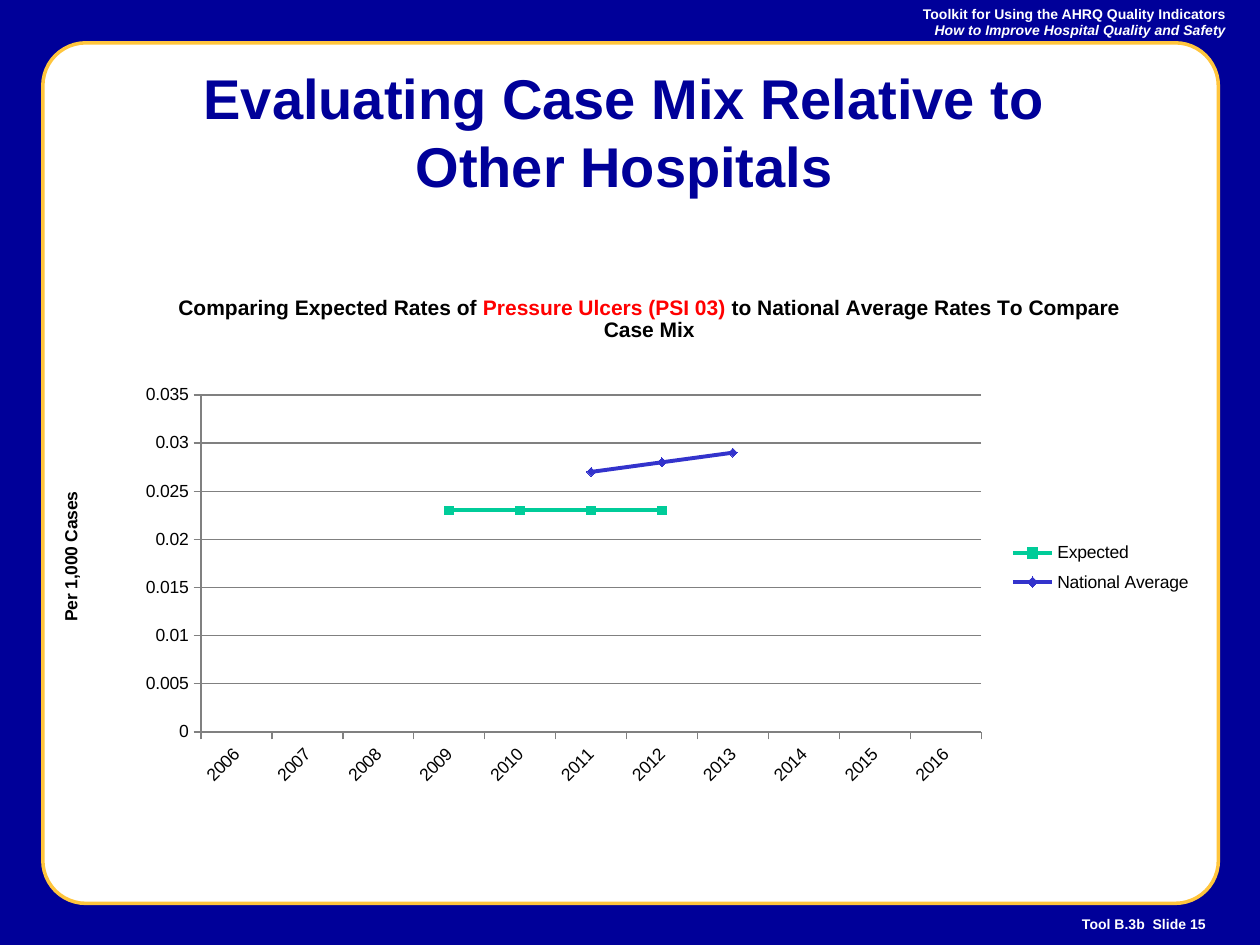
from dataclasses import dataclass

from lxml.etree import SubElement
from pptx import Presentation
from pptx.chart.data import CategoryChartData as ChartData
from pptx.dml.color import RGBColor as Rgb
from pptx.enum.chart import XL_CHART_TYPE as Kind
from pptx.enum.chart import XL_LEGEND_POSITION as Spot
from pptx.enum.chart import XL_MARKER_STYLE as Mark
from pptx.enum.chart import XL_TICK_MARK as Tick
from pptx.enum.shapes import MSO_SHAPE as Form
from pptx.enum.text import MSO_ANCHOR as Anchor
from pptx.enum.text import MSO_AUTO_SIZE as Fit
from pptx.enum.text import PP_ALIGN as Align
from pptx.oxml.ns import qn
from pptx.util import Inches, Pt


@dataclass(frozen=True)
class Theme:
    """Hold the colours, font and type sizes of the slide."""
    face: str = "Arial"
    navy: str = "000099"
    gold: str = "FFC53D"
    white: str = "FFFFFF"
    black: str = "000000"
    red: str = "FF0000"
    grey: str = "808080"
    green: str = "00CC99"
    blue: str = "3333CC"
    head: int = 32
    title: int = 12
    label: int = 10
    note: int = 8


THEME = Theme()
YEARS = [str(year) for year in range(2006, 2017)]
RATES = {
    "Expected": {"2009": 0.023, "2010": 0.023, "2011": 0.023, "2012": 0.023},
    "National Average": {"2011": 0.027, "2012": 0.028, "2013": 0.029},
}
LOOKS = [(THEME.green, Mark.SQUARE), (THEME.blue, Mark.DIAMOND)]
HEADING = [
    ("Comparing Expected Rates of ", THEME.black),
    ("Pressure Ulcers (PSI 03)", THEME.red),
    (" to National Average Rates To Compare Case Mix", THEME.black),
]


def style(font, size, color, bold=False, italic=False):
    """Set the face, size, colour and weight of a font."""
    font.name = THEME.face
    font.size = Pt(size)
    font.color.rgb = Rgb.from_string(color)
    font.bold = bold
    font.italic = italic


def panel(slide, box, form, fill):
    """Add a plain filled shape without a line."""
    shape = slide.shapes.add_shape(form, *map(Inches, box))
    shape.shadow.inherit = False
    shape.fill.solid()
    shape.fill.fore_color.rgb = Rgb.from_string(fill)
    shape.line.fill.background()
    return shape


def frame(slide, box):
    """Add the navy backdrop and the rounded white card inside it."""
    left, top, width, height = box
    panel(slide, box, Form.RECTANGLE, THEME.navy)
    inner = (left + 0.34, top + 0.34, width - 0.67, height - 0.67)
    card = panel(slide, inner, Form.ROUNDED_RECTANGLE, THEME.white)
    card.adjustments[0] = 0.05
    card.line.color.rgb = Rgb.from_string(THEME.gold)
    card.line.width = Pt(2)


def note(slide, box, lines):
    """Add right-aligned small lines, each with its italic flag."""
    text = slide.shapes.add_textbox(*map(Inches, box)).text_frame
    text.word_wrap = True
    text.vertical_anchor = Anchor.MIDDLE
    text.text = "\n".join(line for line, _ in lines)
    for para, (_, italic) in zip(text.paragraphs, lines):
        para.alignment = Align.RIGHT
        style(para.runs[0].font, THEME.note, THEME.white, True, italic)


def headline(slide, box, words):
    """Place the title placeholder above the frame and format it."""
    title = slide.shapes.title
    title.element.getparent().append(title.element)
    title.left, title.top, title.width, title.height = map(Inches, box)
    text = title.text_frame
    text.text = words
    text.word_wrap = True
    text.auto_size = Fit.NONE
    text.vertical_anchor = Anchor.MIDDLE
    para = text.paragraphs[0]
    para.alignment = Align.CENTER
    style(para.runs[0].font, THEME.head, THEME.navy, True)


def place(part, index, spot, inner=False):
    """Give a chart part a manual layout in fractions of the chart."""
    for old in part.findall(qn("c:layout")):
        part.remove(old)
    layout = SubElement(part, qn("c:layout"))
    part.insert(index, layout)
    manual = SubElement(layout, qn("c:manualLayout"))
    rules = [("layoutTarget", "inner")] if inner else []
    rules += [("xMode", "edge"), ("yMode", "edge")]
    rules += zip("xywh", spot)
    for name, value in rules:
        SubElement(manual, qn(f"c:{name}")).set("val", str(value))


def caption(owner, parts, size, spot):
    """Write a chart or axis title from coloured parts."""
    title = owner.chart_title if hasattr(owner, "chart_title") else owner.axis_title
    para = title.text_frame.paragraphs[0]
    for words, color in parts:
        run = para.add_run()
        run.text = words
        style(run.font, size, color, True)
    place(title._element, 1, spot)


def axes(chart):
    """Format both axes and the gridlines."""
    years, rates = chart.category_axis, chart.value_axis
    rates.minimum_scale, rates.maximum_scale = 0, 0.035
    rates.major_unit = 0.005
    rates.has_major_gridlines = True
    for axis in (years, rates):
        axis.major_tick_mark = Tick.OUTSIDE
        axis.minor_tick_mark = Tick.NONE
        style(axis.tick_labels.font, THEME.label, THEME.black)
    for line in (years.format.line, rates.format.line, rates.major_gridlines.format.line):
        line.color.rgb = Rgb.from_string(THEME.grey)
        line.width = Pt(0.75)
    turn = years._element.find(qn("c:txPr")).find(qn("a:bodyPr"))
    turn.set("rot", "-2700000")
    turn.set("vert", "horz")
    caption(rates, [("Per 1,000 Cases", THEME.black)], THEME.label, (0.029, 0.416))


def graph(slide, box):
    """Add the line chart of expected and national rates."""
    data = ChartData()
    data.categories = YEARS
    for name, known in RATES.items():
        data.add_series(name, [known.get(year) for year in YEARS])
    chart = slide.shapes.add_chart(Kind.LINE_MARKERS, *map(Inches, box), data).chart
    style(chart.font, THEME.label, THEME.black)
    caption(chart, HEADING, THEME.title, (0.127, 0.036))
    axes(chart)
    plot = chart.plots[0]
    plot.vary_by_categories = False
    for series, (color, mark) in zip(plot.series, LOOKS):
        shade = Rgb.from_string(color)
        series.smooth = False
        series.format.line.color.rgb = shade
        series.format.line.width = Pt(2.25)
        series.marker.style = mark
        series.marker.size = 5
        series.marker.format.fill.solid()
        series.marker.format.fill.fore_color.rgb = shade
        series.marker.format.line.color.rgb = shade
    area = chart._chartSpace.chart.plotArea
    place(area, 0, (0.149, 0.236, 0.647, 0.648), True)
    chart.has_legend = True
    chart.legend.position = Spot.RIGHT
    chart.legend.include_in_layout = False
    style(chart.legend.font, THEME.label, THEME.black)
    place(chart.legend._element, 1, (0.815, 0.503, 0.16, 0.13))


def main():
    """Build the slide and save it."""
    deck = Presentation()
    deck.slide_width, deck.slide_height = Inches(10), Inches(7.5)
    slide = deck.slides.add_slide(deck.slide_layouts[5])
    frame(slide, (0, 0, 10, 7.5))
    note(slide, (0.17, 0.01, 9.66, 0.33), [
        ("Toolkit for Using the AHRQ Quality Indicators", False),
        ("How to Improve Hospital Quality and Safety", True),
    ])
    note(slide, (0.17, 7.17, 9.5, 0.33), [("Tool B.3b  Slide 15", False)])
    headline(slide, (1.08, 0.5, 7.75, 1.08),
             "Evaluating Case Mix Relative to Other Hospitals")
    graph(slide, (0.17, 2.16, 9.57, 4.13))
    deck.save("out.pptx")


if __name__ == "__main__":
    main()
